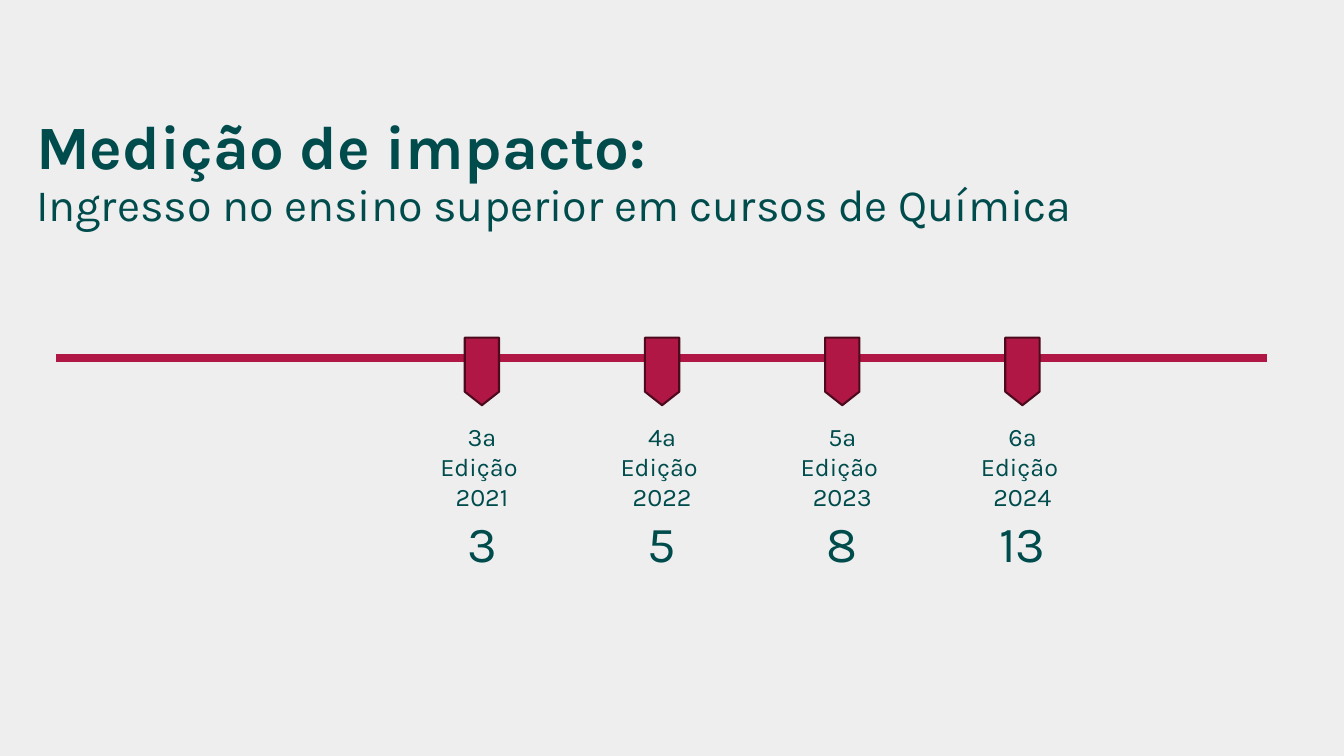
from pptx import Presentation
from pptx.dml.color import RGBColor
from pptx.enum.shapes import MSO_CONNECTOR, MSO_SHAPE
from pptx.enum.text import MSO_ANCHOR, PP_ALIGN
from pptx.oxml.ns import qn
from pptx.util import Inches, Pt
from lxml import etree

CENTER = PP_ALIGN.CENTER
MIDDLE = MSO_ANCHOR.MIDDLE
STRAIGHT = MSO_CONNECTOR.STRAIGHT
MARKER = MSO_SHAPE.FLOWCHART_OFFPAGE_CONNECTOR

BACKGROUND = "EEEEEE"
TEAL = "004C4D"
CRIMSON = "B01744"
DARK_CRIMSON = "4D0A1E"

EDITIONS = [
    ("3ª Edição ", "2021", "3"),
    ("4ª Edição ", "2022", "5"),
    ("5ª Edição ", "2023", "8"),
    ("6ª Edição ", "2024", "13"),
]
FIRST_CENTER = 4.78
EDITION_STEP = 1.787
LABEL_WIDTH = 1.29
MARKER_WIDTH = 0.34


def rgb(color):
    return RGBColor.from_string(color)


def format_font(font, size, bold=False):
    font.name = "Karla"
    font.size = Pt(size)
    font.bold = bold
    font.color.rgb = rgb(TEAL)


presentation = Presentation()
presentation.slide_width = Inches(13.33)
presentation.slide_height = Inches(7.5)
slide = presentation.slides.add_slide(presentation.slide_layouts[6])
slide.background.fill.solid()
slide.background.fill.fore_color.rgb = rgb(BACKGROUND)

# Title
title = slide.shapes.add_textbox(Inches(0.26), Inches(1), Inches(11.5), Inches(1.45))
title.text_frame.word_wrap = True
title.text_frame.vertical_anchor = MIDDLE
paragraph = title.text_frame.paragraphs[0]
paragraph.text = "Medição de impacto:\vIngresso no ensino superior em cursos de Química"
paragraph.line_spacing = 0.9
heading, subtitle = paragraph.runs
format_font(heading.font, 44, bold=True)
format_font(subtitle.font, 32)

# Timeline
timeline = slide.shapes.add_connector(
    STRAIGHT, Inches(0.56), Inches(3.55), Inches(12.57), Inches(3.55))
timeline.line.color.rgb = rgb(CRIMSON)
timeline.line.width = Pt(6)
etree.SubElement(timeline._element.spPr, qn("a:effectLst"))

# Editions
for index, edition in enumerate(EDITIONS):
    center = FIRST_CENTER + index * EDITION_STEP

    marker = slide.shapes.add_shape(
        MARKER, Inches(center - MARKER_WIDTH / 2), Inches(3.35),
        Inches(MARKER_WIDTH), Inches(0.67))
    marker.shadow.inherit = False
    marker.fill.solid()
    marker.fill.fore_color.rgb = rgb(CRIMSON)
    marker.line.color.rgb = rgb(DARK_CRIMSON)
    marker.line.width = Pt(1.5)

    label = slide.shapes.add_textbox(
        Inches(center - LABEL_WIDTH / 2), Inches(4.13),
        Inches(LABEL_WIDTH), Inches(1.31))
    label.text_frame.word_wrap = True
    label.text_frame.text = "\n".join(edition)
    for paragraph, size in zip(label.text_frame.paragraphs, (18, 18, 36)):
        paragraph.alignment = CENTER
        format_font(paragraph.runs[0].font, size)

presentation.save("out.pptx")
